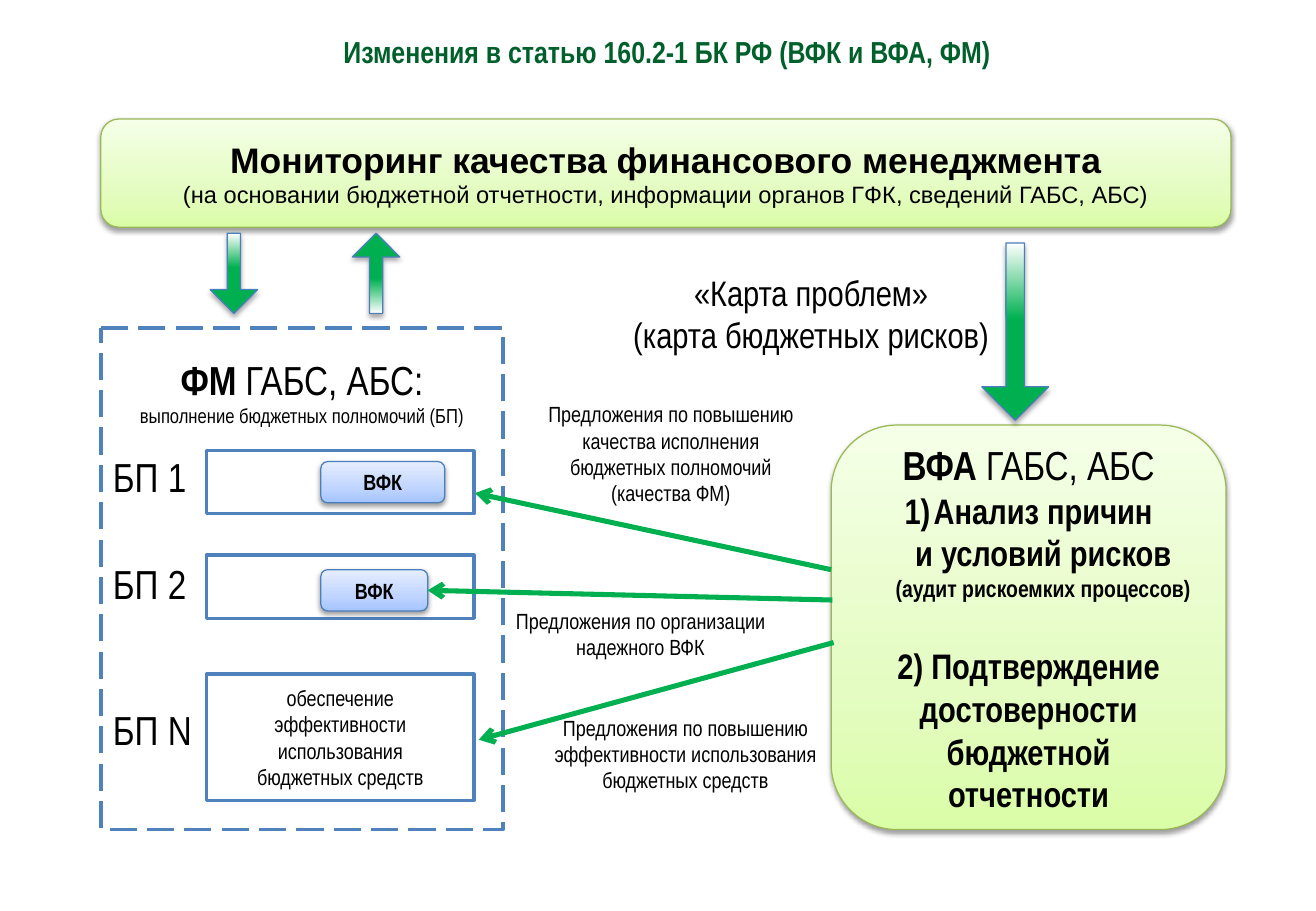
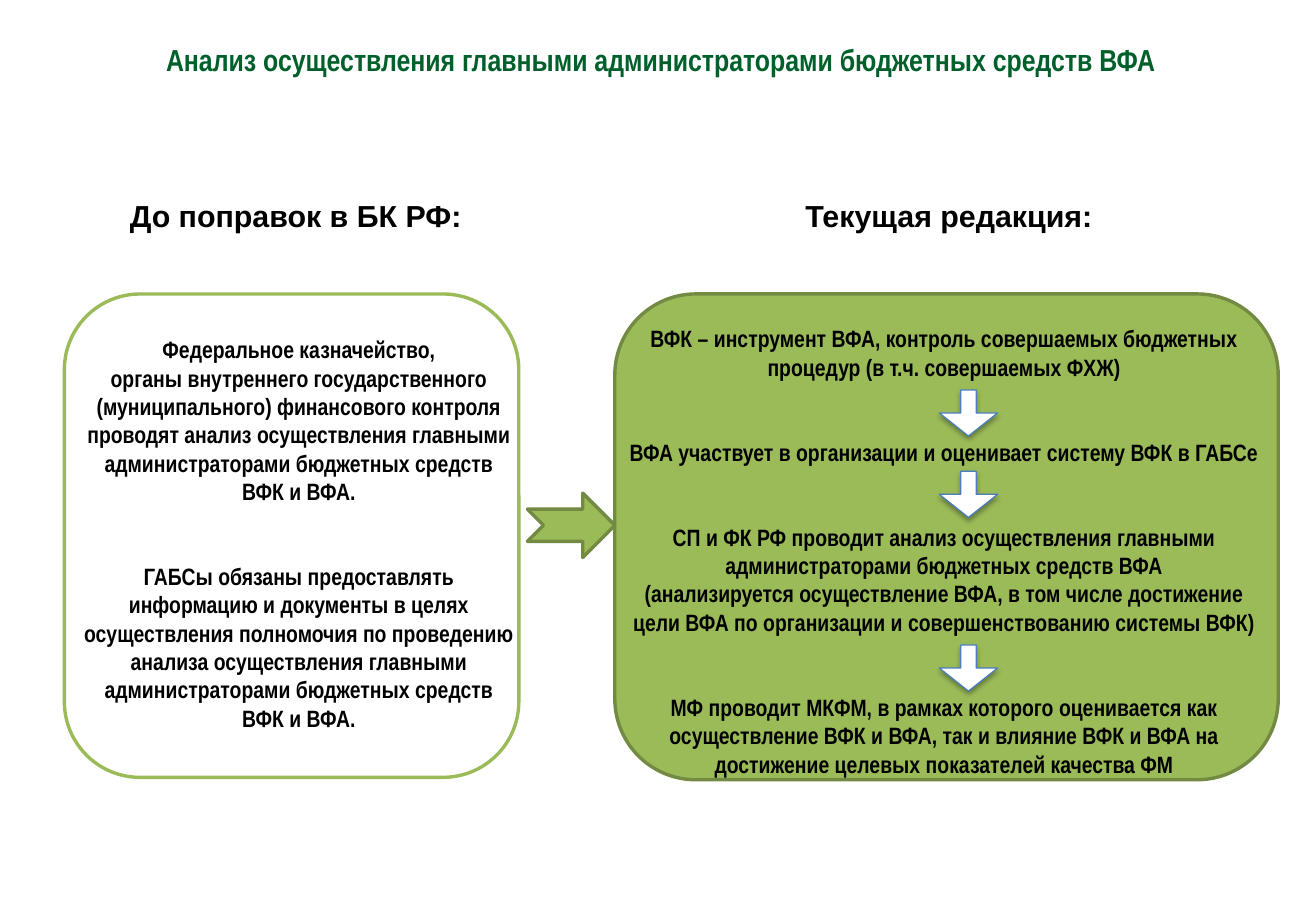
from dataclasses import dataclass
from typing import NamedTuple, Optional

from lxml.etree import SubElement
from pptx import Presentation
from pptx.dml.color import RGBColor
from pptx.enum.dml import MSO_LINE_DASH_STYLE as Dash
from pptx.enum.shapes import MSO_CONNECTOR, MSO_SHAPE as Preset
from pptx.enum.text import MSO_ANCHOR as Anchor, MSO_AUTO_SIZE as AutoSize, PP_ALIGN as Align
from pptx.oxml.ns import qn
from pptx.util import Inches, Pt

GRID = 0.1
COLUMNS, ROWS = 108.3, 75
NARROW, WIDE = "Arial Narrow", "Arial"
BLACK, WHITE, TITLE_GREEN = "000000", "FFFFFF", "00602B"
ARROW_GREEN, BLUE, DEEP_BLUE = "00B050", "4F81BD", "4B7EBC"
OLIVE, DARK_OLIVE, LEAF = "9BBB59", "738A42", "98B955"
LINE_HEIGHT = 1.2


class Box(NamedTuple):
    left: float
    top: float
    width: float
    height: float


class Shadow(NamedTuple):
    opacity: int
    distance: float


class Stop(NamedTuple):
    position: int
    color: str


@dataclass(frozen=True)
class Look:
    fill: str | tuple[Stop, ...]
    line: str
    weight: float = 2
    dash: Optional[Dash] = None
    shadow: Optional[Shadow] = None


class Process(NamedTuple):
    top: float
    height: float
    control: Optional[Box] = None


class Note(NamedTuple):
    box: Box
    text: str
    size: float = 13


class Link(NamedTuple):
    start: tuple[float, float]
    end: tuple[float, float]


PANEL_SHADOW, ARROW_SHADOW = Shadow(38, 1.6), Shadow(35, 1.8)
GREEN_PANEL = Look((Stop(0, "DAFDA7"), Stop(35, "E4FCC2"), Stop(100, "F5FFE7")),
                   LEAF, 0.75, shadow=PANEL_SHADOW)
BLUE_BUTTON = Look((Stop(0, "A4C4FF"), Stop(35, "BFD4FF"), Stop(100, "E6EEFF")),
                   DEEP_BLUE, 0.75, shadow=PANEL_SHADOW)
GREEN_ARROW = Look((Stop(57, ARROW_GREEN), Stop(100, WHITE)), DEEP_BLUE, 0.75, shadow=ARROW_SHADOW)
WHITE_ARROW = Look(WHITE, DEEP_BLUE, 0.75, shadow=ARROW_SHADOW)
BLUE_FRAME = Look(WHITE, BLUE)
DASHED_FRAME = Look(WHITE, BLUE, dash=Dash.LONG_DASH)
OLIVE_FRAME = Look(WHITE, OLIVE)
OLIVE_PANEL = Look(OLIVE, DARK_OLIVE)


def color(value: str) -> RGBColor:
    return RGBColor.from_string(value)


def grid(count: float) -> int:
    return Inches(count * GRID)


def place(box: Box) -> list[int]:
    return [grid(length) for length in box]


def add_text(frame, text: str, *, size: float, bold: bool = False, font: str = NARROW,
             tint: str = BLACK, align: Align = Align.CENTER, before: float = 0,
             after: float = 0, paragraph=None):
    if paragraph is None:
        first = frame.paragraphs[0]
        paragraph = frame.add_paragraph() if first.runs else first
        paragraph.alignment = align
        paragraph.space_before = Pt(before)
        paragraph.space_after = Pt(after)
    for index, line in enumerate(text.split("\n")):
        if index:
            paragraph.add_line_break()
            SubElement(paragraph._p[-1], qn("a:rPr"), sz=str(int(size * 100)))
        if line:
            run = paragraph.add_run()
            run.text = line
            run.font.name = font
            run.font.size = Pt(size)
            run.font.bold = bold
            run.font.color.rgb = color(tint)
    return paragraph


def number_paragraph(paragraph, indent: float) -> None:
    properties = paragraph._p.get_or_add_pPr()
    properties.set("marL", str(grid(indent)))
    properties.set("indent", str(-grid(indent)))
    SubElement(properties, qn("a:buFont"), typeface="+mj-lt")
    SubElement(properties, qn("a:buAutoNum"), type="arabicParenR")


def add_color(parent, value: str):
    return SubElement(parent, qn("a:srgbClr"), val=value)


def paint(shape, fill: str | tuple[Stop, ...]) -> None:
    if isinstance(fill, str):
        shape.fill.solid()
        shape.fill.fore_color.rgb = color(fill)
        return
    shape.fill.gradient()
    shape.fill.gradient_angle = 90
    stops = shape.element.spPr.find(qn("a:gradFill")).find(qn("a:gsLst"))
    for stop in list(stops):
        stops.remove(stop)
    for stop in fill:
        add_color(SubElement(stops, qn("a:gs"), pos=str(stop.position * 1000)), stop.color)


def cast_shadow(shape, shadow: Shadow) -> None:
    effects = shape.element.spPr.find(qn("a:effectLst"))
    outer = SubElement(effects, qn("a:outerShdw"), blurRad=str(Pt(3.1)),
                       dist=str(Pt(shadow.distance)), dir="5400000", rotWithShape="0")
    SubElement(add_color(outer, BLACK), qn("a:alpha"), val=str(shadow.opacity * 1000))


def add_figure(slide, preset: Preset, box: Box, look: Look):
    shape = slide.shapes.add_shape(preset, *place(box))
    shape.shadow.inherit = False
    paint(shape, look.fill)
    shape.line.color.rgb = color(look.line)
    shape.line.width = Pt(look.weight)
    if look.dash:
        shape.line.dash_style = look.dash
    if look.shadow:
        cast_shadow(shape, look.shadow)
    shape.text_frame.word_wrap = True
    shape.text_frame.vertical_anchor = Anchor.MIDDLE
    return shape


def add_arrow(slide, box: Box, look: Look, shaft: float, rotation: float = 0) -> None:
    arrow = add_figure(slide, Preset.DOWN_ARROW, box, look)
    arrow.adjustments[0] = shaft
    arrow.rotation = rotation


def add_frame(slide, box: Box, wrap: bool = True):
    frame = slide.shapes.add_textbox(*place(box)).text_frame
    frame.word_wrap = wrap
    return frame


def add_link(slide, link: Link) -> None:
    ends = [grid(length) for length in (*link.start, *link.end)]
    connector = slide.shapes.add_connector(MSO_CONNECTOR.STRAIGHT, *ends)
    connector.line.color.rgb = color(ARROW_GREEN)
    connector.line.width = Pt(3)
    properties = connector.element.spPr
    SubElement(properties.find(qn("a:ln")), qn("a:tailEnd"), type="arrow")
    SubElement(properties, qn("a:effectLst"))


def add_titled_slide(presentation, text: str, box: Box):
    slide = presentation.slides.add_slide(presentation.slide_layouts[5])
    title = slide.shapes.title
    title.left, title.top, title.width, title.height = place(box)
    frame = title.text_frame
    frame.auto_size = AutoSize.NONE
    frame.word_wrap = True
    frame.vertical_anchor = Anchor.MIDDLE
    add_text(frame, text, size=18, bold=True, tint=TITLE_GREEN)
    return slide


def add_management(slide) -> None:
    frame = add_figure(slide, Preset.FLOWCHART_PROCESS, Box(8.3, 27, 33.1, 41.3),
                       DASHED_FRAME).text_frame
    frame.vertical_anchor = Anchor.TOP
    frame.margin_top = grid(2.2)
    heading = add_text(frame, "ФМ", size=24, bold=True)
    add_text(frame, " ГАБС, АБС:\n", size=24, paragraph=heading)
    add_text(frame, "выполнение бюджетных полномочий (БП)", size=12, paragraph=heading)
    row = 24 * LINE_HEIGHT
    for label, before in (("БП 1", row / 2), ("БП 2", row + 6), ("БП N", row * 2)):
        add_text(frame, label, size=24, align=Align.LEFT, before=before)

    processes = (
        Process(37.1, 5.2, Box(26.4, 38, 10.2, 3.4)),
        Process(45.7, 5.2, Box(26.4, 46.9, 8.8, 3.4)),
        Process(55.5, 10.4),
    )
    for process in processes:
        box = Box(17, process.top, 22, process.height)
        figure = add_figure(slide, Preset.RECTANGLE, box, BLUE_FRAME)
        if process.control:
            button = add_figure(slide, Preset.ROUNDED_RECTANGLE, process.control, BLUE_BUTTON)
            add_text(button.text_frame, "ВФК", size=13, bold=True)
        else:
            for line in ("обеспечение", "эффективности", "использования", "бюджетных средств"):
                add_text(figure.text_frame, line, size=13)


def add_audit(slide) -> None:
    frame = add_figure(slide, Preset.ROUNDED_RECTANGLE, Box(68.4, 35, 32.5, 33.3),
                       GREEN_PANEL).text_frame
    heading = add_text(frame, "ВФА ", size=24, bold=True)
    add_text(frame, "ГАБС, АБС", size=24, paragraph=heading)
    analysis = add_text(frame, "Анализ причин\nи условий рисков\n", size=21, bold=True)
    add_text(frame, "(аудит рискоемких процессов)", size=14, bold=True, paragraph=analysis)
    number_paragraph(analysis, 2.4)
    add_text(frame, "2) Подтверждение достоверности бюджетной отчетности",
             size=21, bold=True, before=21 * LINE_HEIGHT)


def build_changes(presentation) -> None:
    slide = add_titled_slide(presentation, "Изменения в статью 160.2-1 БК РФ (ВФК и ВФА, ФМ)",
                             Box(5.7, 2, 98.4, 4.4))
    add_management(slide)
    add_audit(slide)
    monitoring = add_figure(slide, Preset.ROUNDED_RECTANGLE, Box(8.3, 9.8, 93, 8.9), GREEN_PANEL)
    heading = add_text(monitoring.text_frame, "Мониторинг качества финансового менеджмента\n",
                       size=21, bold=True, font=WIDE)
    add_text(monitoring.text_frame,
             "(на основании бюджетной отчетности, информации органов ГФК, сведений ГАБС, АБС)",
             size=14, font=WIDE, paragraph=heading)
    for box, rotation in ((Box(17.3, 19.2, 3.9, 6.6), 0), (Box(29, 19.2, 3.9, 6.6), 180),
                          (Box(80.8, 20, 5.5, 14.6), 0)):
        add_arrow(slide, box, GREEN_ARROW, 0.278, rotation)
    notes = (
        Note(Box(51, 21.8, 31.5, 8.1), "«Карта проблем»\n(карта бюджетных рисков)", 21),
        Note(Box(42.9, 32.5, 24.6, 9.8), "Предложения по повышению\n"
             "качества исполнения бюджетных полномочий (качества ФМ)"),
        Note(Box(40.4, 49.5, 24.6, 5.4), "Предложения по организации надежного ВФК"),
        Note(Box(44.1, 58.3, 24.6, 7.6), "Предложения по повышению\n"
             "эффективности использования бюджетных средств"),
    )
    for note in notes:
        add_text(add_frame(slide, note.box), note.text, size=note.size)
    for link in (Link((68.4, 46.9), (39.1, 40.6)), Link((68.5, 49.4), (35.2, 48.6)),
                 Link((68.6, 52.9), (39.4, 60.9))):
        add_link(slide, link)


def build_comparison(presentation) -> None:
    slide = add_titled_slide(
        presentation, "Анализ осуществления главными администраторами бюджетных средств ВФА",
        Box(6.2, 2.9, 96.4, 4))
    for text, box, wrap in (("До поправок в БК РФ:", Box(9.7, 15.7, 29.7, 4), False),
                            ("Текущая редакция:", Box(65.3, 15.7, 28.8, 4), True)):
        add_text(add_frame(slide, box, wrap), text, size=18, bold=True, font=WIDE,
                 align=Align.LEFT)
    add_figure(slide, Preset.ROUNDED_RECTANGLE, Box(5.3, 24.2, 37.4, 39.8), OLIVE_FRAME)
    add_figure(slide, Preset.ROUNDED_RECTANGLE, Box(50.6, 24.2, 54.6, 40), OLIVE_PANEL)

    gap = 2 * 14 * LINE_HEIGHT
    columns = (
        (Box(5.9, 27.1, 37.4, 34), (
            ("Федеральное казначейство,", 0),
            ("органы внутреннего государственного (муниципального) финансового контроля "
             "проводят анализ осуществления главными администраторами бюджетных средств "
             "ВФК и ВФА.", 0),
            ("ГАБСы обязаны предоставлять информацию и документы в целях осуществления "
             "полномочия по проведению анализа осуществления главными администраторами "
             "бюджетных средств ВФК и ВФА.", gap))),
        (Box(50.6, 26.2, 54.2, 38.7), (
            ("ВФК – инструмент ВФА, контроль совершаемых бюджетных процедур "
             "(в т.ч. совершаемых ФХЖ)", 0),
            ("ВФА участвует в организации и оценивает систему ВФК в ГАБСе", gap),
            ("СП и ФК РФ проводит анализ осуществления главными администраторами "
             "бюджетных средств ВФА", gap),
            ("(анализируется осуществление ВФА, в том числе достижение цели ВФА по "
             "организации и совершенствованию системы ВФК)", 0),
            ("МФ проводит МКФМ, в рамках которого оценивается как осуществление ВФК и ВФА, "
             "так и влияние ВФК и ВФА на достижение целевых показателей качества ФМ", gap))),
    )
    for box, paragraphs in columns:
        frame = add_frame(slide, box)
        for text, before in paragraphs:
            add_text(frame, text, size=14, bold=True, before=before)
    for top in (32.1, 38.8, 53.1):
        add_arrow(slide, Box(77.3, top, 4.8, 3.8), WHITE_ARROW, 0.264)
    add_figure(slide, Preset.NOTCHED_RIGHT_ARROW, Box(43.4, 40.6, 7.2, 5.3), OLIVE_PANEL)


def main() -> None:
    presentation = Presentation()
    presentation.slide_width, presentation.slide_height = grid(COLUMNS), grid(ROWS)
    build_changes(presentation)
    build_comparison(presentation)
    presentation.save("out.pptx")


if __name__ == "__main__":
    main()
